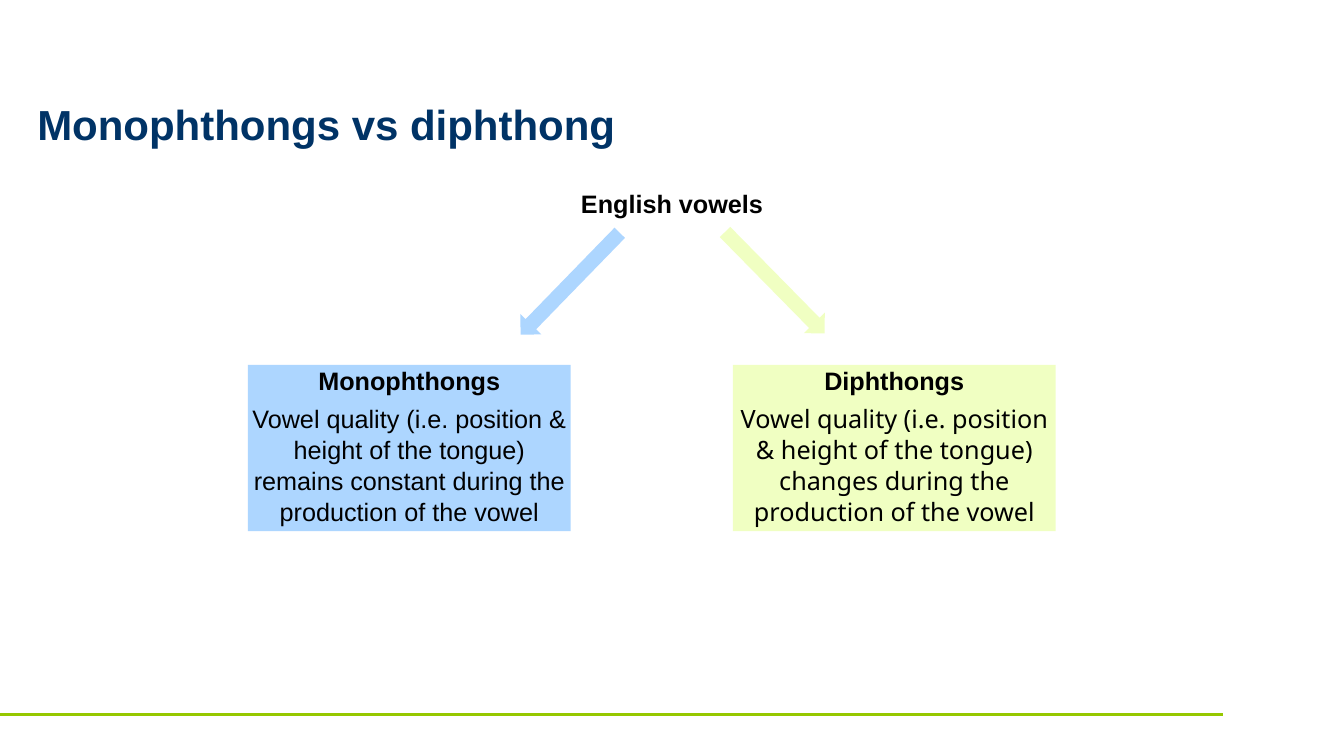
from lxml import etree
from pptx import Presentation
from pptx.dml.color import RGBColor
from pptx.enum.shapes import MSO_CONNECTOR, MSO_SHAPE
from pptx.enum.text import MSO_ANCHOR, PP_ALIGN
from pptx.oxml.ns import qn
from pptx.util import Inches, Pt

RECTANGLE = MSO_SHAPE.RECTANGLE
RIGHT_ARROW = MSO_SHAPE.RIGHT_ARROW
STRAIGHT = MSO_CONNECTOR.STRAIGHT
TOP, MIDDLE = MSO_ANCHOR.TOP, MSO_ANCHOR.MIDDLE
LEFT, CENTER = PP_ALIGN.LEFT, PP_ALIGN.CENTER

BLUE = "ADD6FF"
LIME = "F0FFC2"
NAVY = "003366"
GREEN = "96C800"
BLACK = "000000"
VOWEL_KINDS = [
    ("Monophthongs", "remains constant", "Arial", BLUE, 2.46, (4.95, 2.67), 134.2),
    ("Diphthongs", "changes", "Noto Sans", LIME, 7.27, (6.98, 2.66), 45.5),
]


def color(value):
    return RGBColor.from_string(value)


def prepare_frame(box, anchor=TOP):
    frame = box.text_frame
    frame.word_wrap = True
    frame.vertical_anchor = anchor
    frame.margin_left = frame.margin_right = 0
    frame.margin_top = frame.margin_bottom = 0
    return frame


def write(para, text, size=18, font="Arial", fill=BLACK, bold=False,
          align=CENTER, spacing=1.02, before=0):
    para.alignment = align
    para.line_spacing = spacing
    para.space_before = Pt(before)
    span = para.add_run()
    span.text = text
    span.font.size = Pt(size)
    span.font.name = font
    span.font.bold = bold
    span.font.color.rgb = color(fill)


def add_label(page, text, left, top, width, height, anchor=TOP, **style):
    box = page.shapes.add_textbox(Inches(left), Inches(top), Inches(width), Inches(height))
    write(prepare_frame(box, anchor).paragraphs[0], text, bold=True, **style)


def add_filled(page, preset, left, top, width, height, fill):
    shape = page.shapes.add_shape(preset, Inches(left), Inches(top), Inches(width), Inches(height))
    shape.shadow.inherit = False
    shape.fill.solid()
    shape.fill.fore_color.rgb = color(fill)
    shape.line.fill.background()
    return shape


def add_vowel_kind(page, name, behaviour, font, fill, left, arrow_at, angle):
    frame = prepare_frame(add_filled(page, RECTANGLE, left, 3.62, 3.2, 1.65, fill))
    write(frame.paragraphs[0], name, bold=True)
    write(frame.add_paragraph(),
          f"Vowel quality (i.e. position & height of the tongue) {behaviour} "
          "during the production of the vowel", font=font, before=5)
    arrow = add_filled(page, RIGHT_ARROW, *arrow_at, 1.41, 0.29, fill)
    arrow.rotation = angle


def add_footer_line(page):
    line = page.shapes.add_connector(STRAIGHT, 0, Inches(7.09), Inches(12.13), Inches(7.09))
    line.line.color.rgb = color(GREEN)
    line.line.width = Pt(2.25)
    etree.SubElement(line._element.spPr, qn("a:effectLst"))


def main():
    deck = Presentation()
    deck.slide_width = Inches(13.33)
    deck.slide_height = Inches(7.5)
    page = deck.slides.add_slide(deck.slide_layouts[6])
    add_footer_line(page)
    add_label(page, "Monophthongs vs diphthong", 0.37, 1.03, 12.6, 0.47,
              anchor=MIDDLE, size=30, fill=NAVY, align=LEFT, spacing=0.85)
    add_label(page, "English vowels", 4.42, 1.86, 4.49, 0.68)
    for kind in VOWEL_KINDS:
        add_vowel_kind(page, *kind)
    deck.save("out.pptx")


if __name__ == "__main__":
    main()
